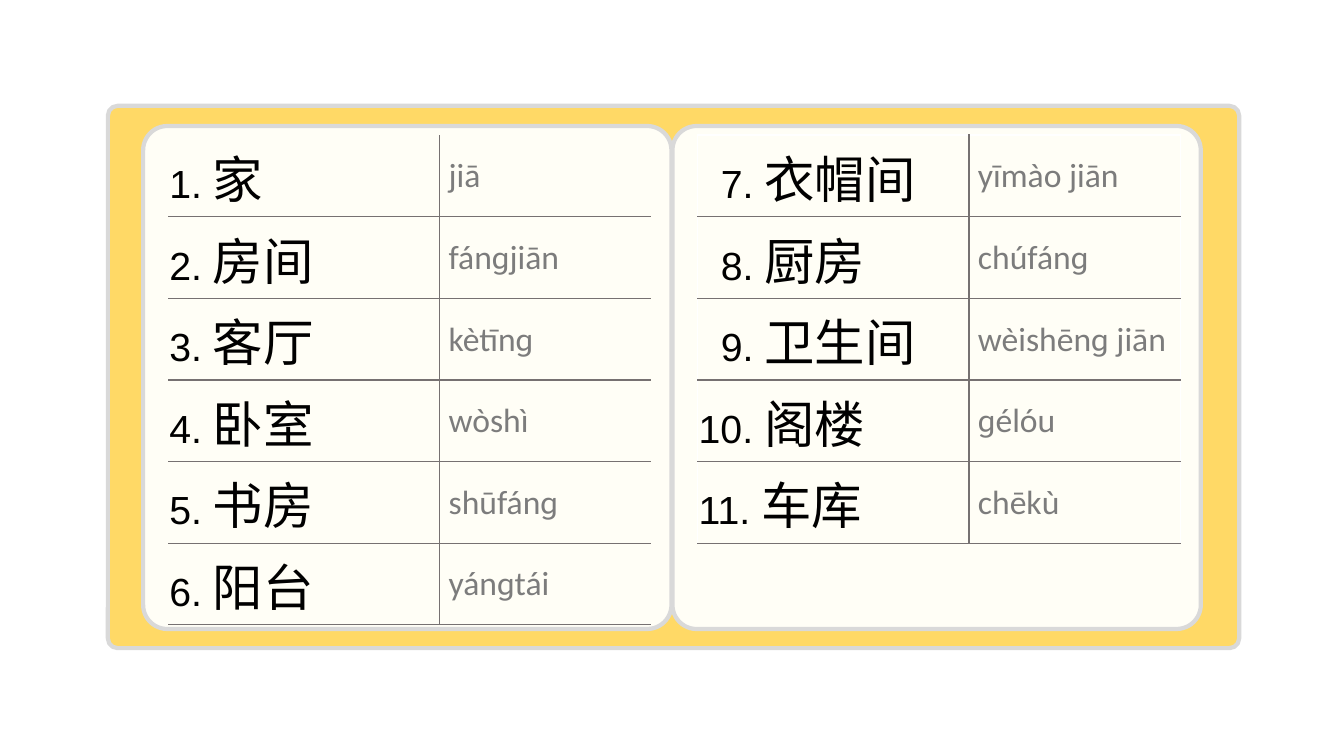
"""Build a slide of Chinese words for the rooms of a home."""
from lxml import etree
from pptx import Presentation
from pptx.dml.color import RGBColor
from pptx.enum import shapes, text
from pptx.oxml import ns
from pptx.util import Inches, Pt

GOLD = RGBColor(0xFF, 0xD9, 0x66)
CREAM = RGBColor(0xFF, 0xFE, 0xF6)
SILVER = RGBColor(0xD9, 0xD9, 0xD9)
BLACK = RGBColor(0, 0, 0)
GRAY = RGBColor(0x7C, 0x7C, 0x7C)
RULE = RGBColor(0x76, 0x71, 0x71)
WHITE = RGBColor(0xFF, 0xFF, 0xFF)

ROOMS = [
    ("家", "jiā"), ("房间", "fánɡjiān"), ("客厅", "kètīnɡ"),
    ("卧室", "wòshì"), ("书房", "shūfánɡ"), ("阳台", "yánɡtái"),
    ("衣帽间", "yīmào jiān"), ("厨房", "chúfánɡ"), ("卫生间", "wèishēnɡ jiān"),
    ("阁楼", "ɡélóu"), ("车库", "chēkù"),
]
SPLIT = 6
FRAME = (1.07, 1.05, 11.22, 5.38)
LEFT, TOP, WIDE, HIGH = 1.42, 1.25, 5.24, 4.99
STEP = 5.25
INSET_X, INSET_Y = 0.25, 0.09
COLS = (2.69, 2.1)
ROW = 0.81
NUMBER = {"name": "Arial", "size": Pt(28)}
WORD = {"name": "Noto Sans CJK SC", "size": Pt(36)}
SOUND = {"name": "Calibri", "size": Pt(24)}
PAD = {"margin_top": Inches(0.01), "margin_right": Inches(0.01),
       "margin_bottom": 0, "vertical_anchor": text.MSO_ANCHOR.MIDDLE}


def apply(item, form):
    for key, val in form.items():
        setattr(item, key, val)


def add_panel(group, box, fill, curve):
    panel = group.shapes.add_shape(
        shapes.MSO_SHAPE.ROUNDED_RECTANGLE, *map(Inches, box))
    panel.adjustments[0] = curve
    panel.shadow.inherit = False
    panel.fill.solid()
    panel.fill.fore_color.rgb = fill
    panel.line.color.rgb = SILVER
    panel.line.width = Pt(3)


def add_run(para, words, form, color):
    run = para.add_run()
    run.text = words
    apply(run.font, form)
    run.font.color.rgb = color
    return run


def set_edges(cell, edges):
    props = cell._tc.get_or_add_tcPr()
    for spot, (side, color) in enumerate(edges.items()):
        line = etree.Element(ns.qn("a:ln" + side), w=str(Pt(1)))
        if color is None:
            etree.SubElement(line, ns.qn("a:noFill"))
        else:
            fill = etree.SubElement(line, ns.qn("a:solidFill"))
            etree.SubElement(fill, ns.qn("a:srgbClr"), val=str(color))
        props.insert(spot, line)


def fill_cell(cell, indent, edges):
    apply(cell, PAD)
    cell.margin_left = Inches(indent)
    cell.fill.background()
    set_edges(cell, edges)
    return cell.text_frame.paragraphs[0]


def add_list(slide, rooms, first, left, edge):
    table = slide.shapes.add_table(
        len(rooms), 2, Inches(left), Inches(TOP + INSET_Y),
        Inches(sum(COLS)), Inches(ROW * len(rooms))).table
    apply(table, {"first_row": False, "horz_banding": False})
    for col, width in zip(table.columns, COLS):
        col.width = Inches(width)
    for row, (word, sound) in enumerate(rooms):
        table.rows[row].height = Inches(ROW)
        num = first + row
        top = RULE if row else edge
        indent = 0.23 if SPLIT < num < 10 else 0.01
        para = fill_cell(table.cell(row, 0), indent,
                         {"L": edge, "R": RULE, "T": top, "B": RULE})
        add_run(para, f"{num}. ", NUMBER, BLACK)
        run = add_run(para, word, WORD, BLACK)
        etree.SubElement(run.font._element, ns.qn("a:ea"), typeface=WORD["name"])
        para = fill_cell(table.cell(row, 1), 0.09,
                         {"L": RULE, "R": edge, "T": top, "B": RULE})
        add_run(para, sound, SOUND, GRAY)


def main():
    deck = Presentation()
    apply(deck, {"slide_width": Inches(13.33), "slide_height": Inches(7.5)})
    slide = deck.slides.add_slide(deck.slide_layouts[6])
    group = slide.shapes.add_group_shape()
    add_panel(group, FRAME, GOLD, 0.018)
    halves = [(ROOMS[:SPLIT], 1, None), (ROOMS[SPLIT:], SPLIT + 1, WHITE)]
    for side, (rooms, first, edge) in enumerate(halves):
        left = LEFT + side * STEP
        add_panel(group, (left, TOP, WIDE, HIGH), CREAM, 0.048)
        add_list(slide, rooms, first, left + INSET_X, edge)
    deck.save("out.pptx")


if __name__ == "__main__":
    main()
